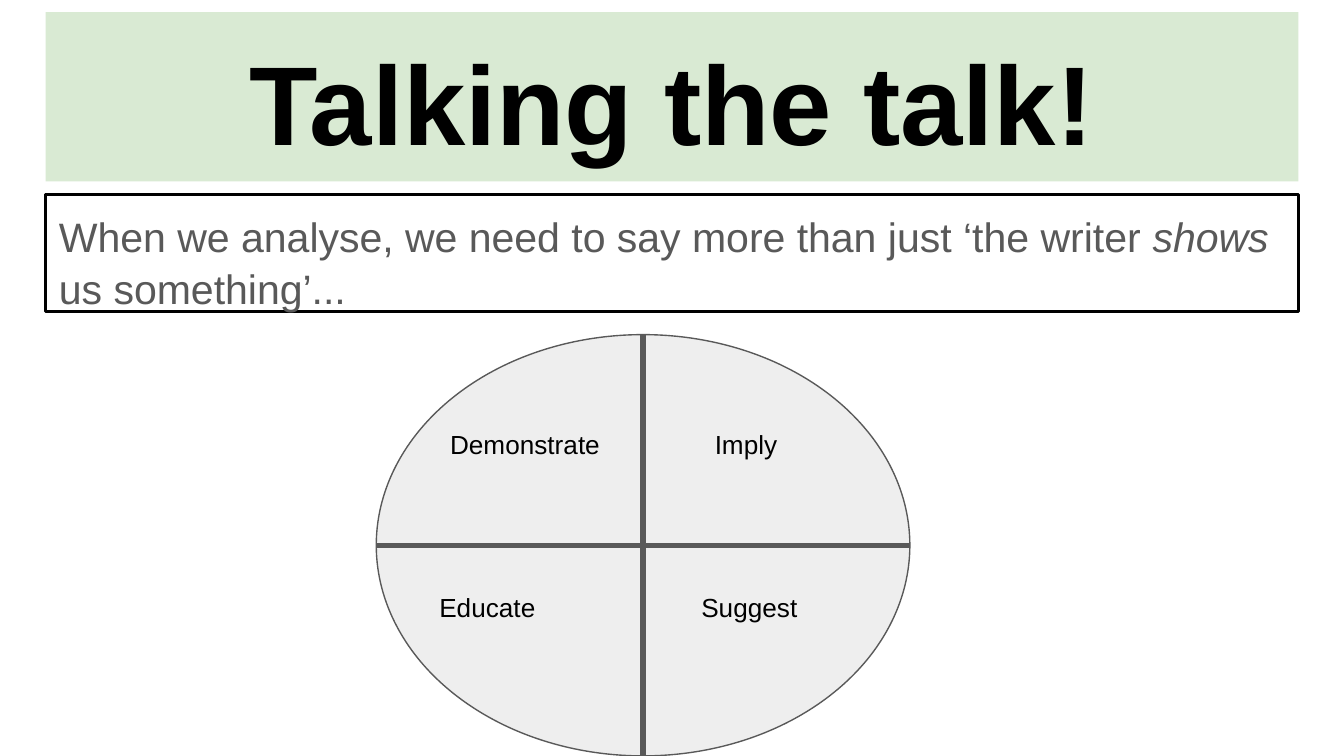
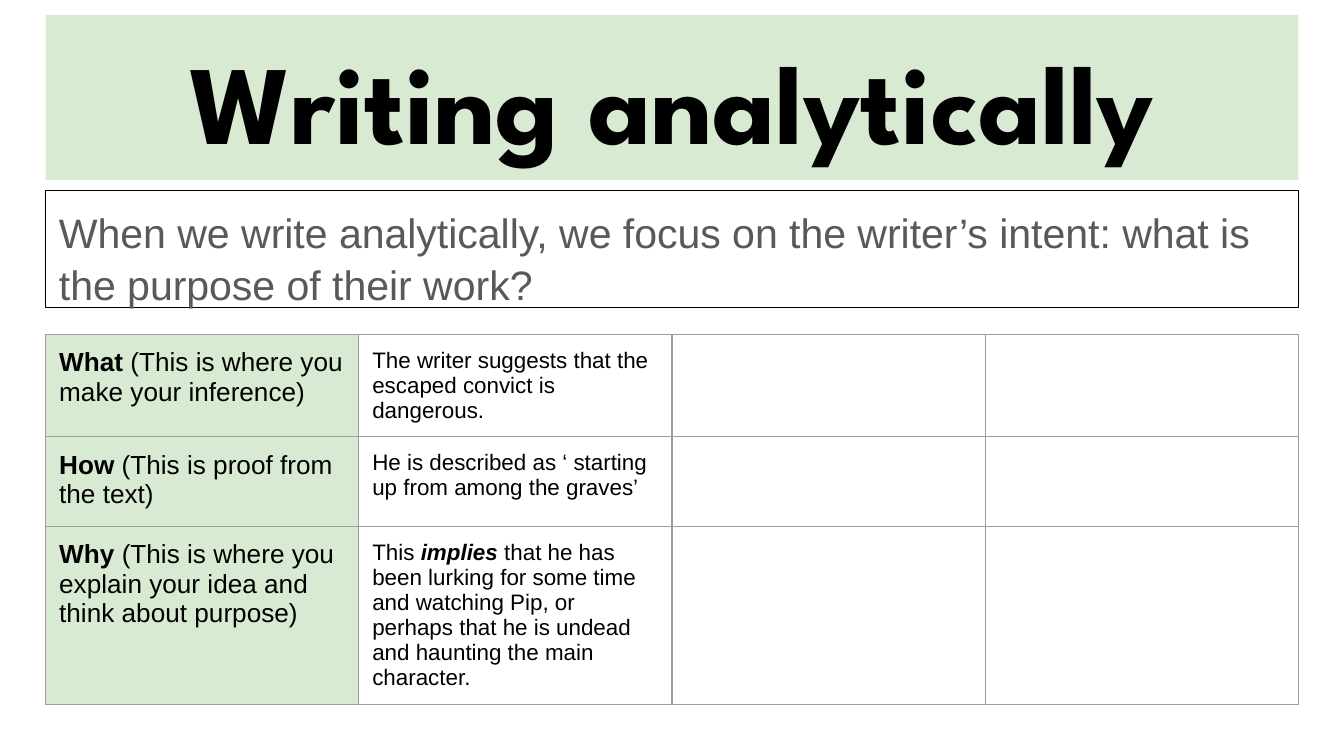
from dataclasses import dataclass
from lxml.etree import SubElement
from pptx import Presentation
from pptx.dml.color import RGBColor as RGB
from pptx.enum.shapes import MSO_CONNECTOR as CXN, MSO_SHAPE as SHAPE
from pptx.enum.text import MSO_ANCHOR as ANCHOR, MSO_AUTO_SIZE as FIT, PP_ALIGN as ALIGN
from pptx.oxml import parse_xml
from pptx.oxml.ns import nsdecls, qn
from pptx.util import Inches, Pt


@dataclass(frozen=True)
class Theme:
    green: RGB = RGB.from_string("D9EAD3")
    pale: RGB = RGB.from_string("EEEEEE")
    grey: RGB = RGB.from_string("595959")
    black: RGB = RGB.from_string("000000")
    border: str = "9E9E9E"
    font: str = "Arial"
    title: int = 60
    lead: int = 22
    label: int = 14
    example: int = 12


T = Theme()
prs = Presentation()
prs.slide_width, prs.slide_height = Inches(10), Inches(5.625)
COL, ROW = prs.slide_width / 100, prs.slide_height / 100
LEFT, WIDTH = 3.4, 93.2
BODY_TOP = 44.27
PAD = Inches(0.1)


def grid(x, y, w, h):
    return int(x * COL), int(y * ROW), int(w * COL), int(h * ROW)


def write(tf, runs, size, color=T.black, font=T.font):
    tf.word_wrap = True
    tf.auto_size = FIT.NONE
    tf.margin_left = tf.margin_right = tf.margin_top = tf.margin_bottom = PAD
    p = tf.paragraphs[0]
    for text, style in runs:
        r = p.add_run()
        r.text = text
        r.font.name, r.font.size = font, Pt(size)
        r.font.color.rgb = color
        r.font.bold, r.font.italic = "b" in style, "i" in style
    return p


headers = [
    ("Talking the talk!", T.font, 1.6, 22.4, 25.78, 1.5,
     [("When we analyse, we need to say more than just ‘the writer ", ""),
      ("shows", "i"), (" us something’...", "")]),
    ("Writing analytically", "League Spartan", 1.96, 21.87, 25.24, 0.75,
     [("When we write analytically, we focus on the writer’s intent: "
       "what is the purpose of their work?", "")]),
]
slides = []
for title, font, title_top, title_height, lead_top, line_width, lead in headers:
    s = prs.slides.add_slide(prs.slide_layouts[5])
    slides.append(s)
    sp = s.shapes.title
    sp.left, sp.top, sp.width, sp.height = grid(LEFT, title_top, WIDTH, title_height)
    sp.fill.solid()
    sp.fill.fore_color.rgb = T.green
    p = write(sp.text_frame, [(title, "b")], T.title, font=font)
    p.alignment = ALIGN.CENTER
    sp.text_frame.vertical_anchor = ANCHOR.BOTTOM

    sp = s.shapes.add_textbox(*grid(LEFT, lead_top, WIDTH, 15.47))
    sp.line.color.rgb = T.black
    sp.line.width = Pt(line_width)
    p = write(sp.text_frame, lead, T.lead, T.grey)
    p.line_spacing = 1.06

talk, analysis = slides

wheel = talk.shapes.add_shape(SHAPE.OVAL, *grid(28, BODY_TOP, 39.7, 100 - BODY_TOP))
wheel.shadow.inherit = False
wheel.fill.solid()
wheel.fill.fore_color.rgb = T.pale
wheel.line.color.rgb = T.grey
wheel.line.width = Pt(0.75)

for verb, x, y, w in [
    ("Demonstrate", 32.5, 54.93, 13.8),
    ("Imply", 52.2, 54.93, 7.7),
    ("Educate", 31.7, 76.44, 13.8),
    ("Suggest", 51.2, 76.44, 9.7),
]:
    sp = talk.shapes.add_textbox(*grid(x, y, w, 7.82))
    write(sp.text_frame, [(verb, "")], T.label)

right, bottom = wheel.left + wheel.width, wheel.top + wheel.height
mid_x, mid_y = wheel.left + wheel.width // 2, wheel.top + wheel.height // 2
for ends in [(mid_x, wheel.top, mid_x, bottom), (wheel.left, mid_y, right, mid_y)]:
    spoke = talk.shapes.add_connector(CXN.STRAIGHT, *ends)
    spoke.line.color.rgb = T.grey
    spoke.line.width = Pt(3)
    SubElement(spoke.element.spPr, qn("a:effectLst"))

rows = [
    (13.5, [("What", "b"), (" (This is where you make your inference)", "")],
     [("The writer suggests that the escaped convict is dangerous.", "")]),
    (11.9, [("How", "b"), (" (This is proof from the text)", "")],
     [("He is described as ‘ starting up from among the graves’", "")]),
    (23.5, [("Why ", "b"), ("(This is where you explain your idea and think about purpose)", "")],
     [("This ", ""), ("implies ", "bi"),
      ("that he has been lurking for some time and watching Pip, or perhaps "
       "that he is undead and haunting the main character.", "")]),
]
total = sum(height for height, _, _ in rows)
table = analysis.shapes.add_table(len(rows), 4, *grid(LEFT, BODY_TOP, WIDTH, total)).table
table.first_row = table.horz_banding = False
for i, (height, prompt, example) in enumerate(rows):
    table.rows[i].height = int(height * ROW)
    write(table.cell(i, 0).text_frame, prompt, T.label)
    write(table.cell(i, 1).text_frame, example, T.example)
    for j in range(4):
        cell = table.cell(i, j)
        cell.margin_left = cell.margin_right = cell.margin_top = cell.margin_bottom = PAD
        if j == 0:
            cell.fill.solid()
            cell.fill.fore_color.rgb = T.green
        else:
            cell.fill.background()
        tcPr = cell._tc.get_or_add_tcPr()
        for k, side in enumerate("LRTB"):
            tcPr.insert(k, parse_xml(
                f'<a:ln{side} {nsdecls("a")} w="{Pt(0.75)}"><a:solidFill>'
                f'<a:srgbClr val="{T.border}"/></a:solidFill></a:ln{side}>'))

prs.save("out.pptx")
